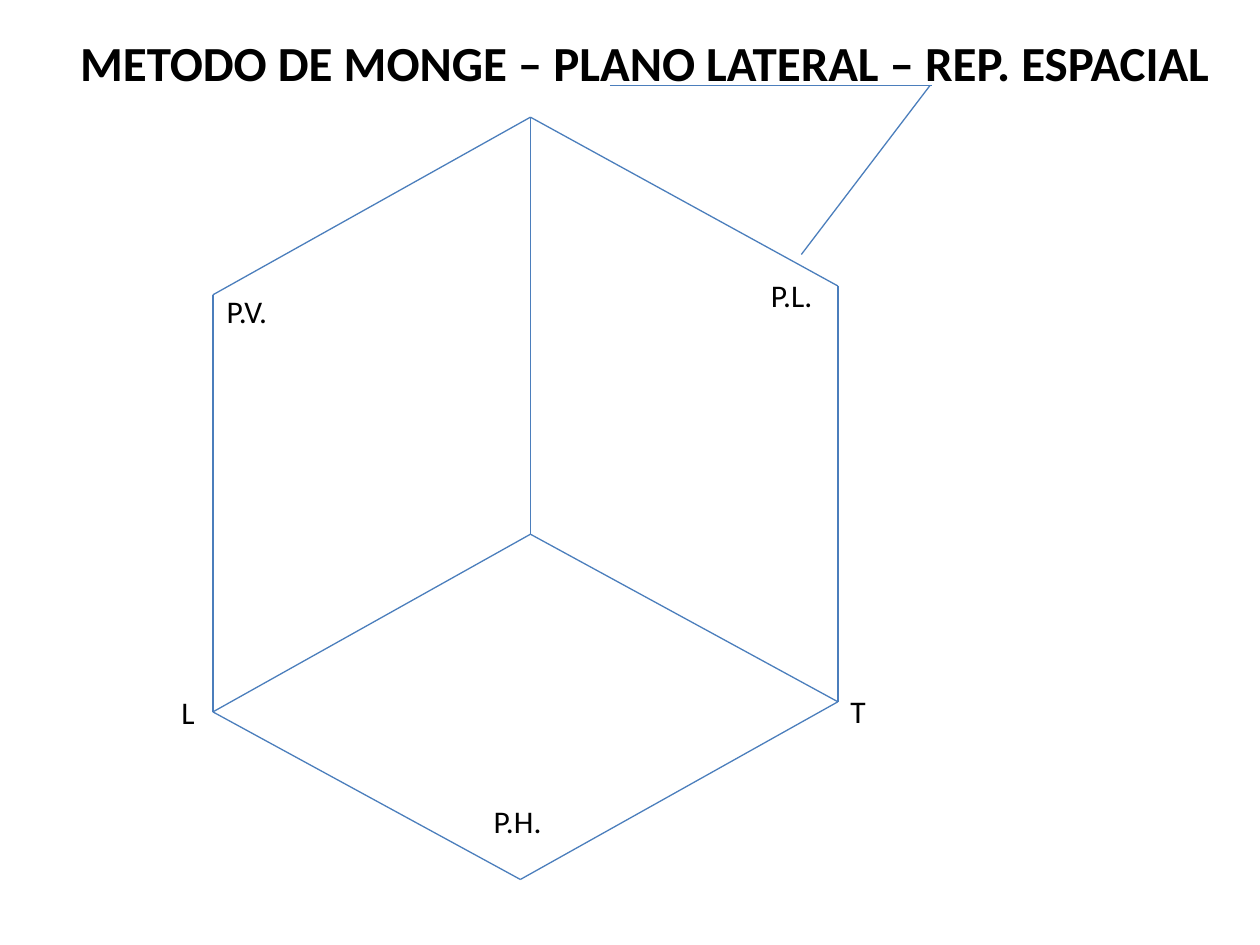
"""Build the slide on the Monge method with its three projection planes."""
from itertools import pairwise

from pptx import Presentation
from pptx.dml.color import RGBColor
from pptx.enum.shapes import MSO_CONNECTOR as Connector
from pptx.enum.text import MSO_AUTO_SIZE as AutoSize, PP_ALIGN as Align
from pptx.oxml.ns import qn
from pptx.util import Inches, Pt

BLACK = RGBColor(0x00, 0x00, 0x00)
BLUE = RGBColor(0x4B, 0x7E, 0xBC)

TOP = (4.21, 0.93)
CENTER = (4.21, 4.24)
LEFT_TOP = (1.69, 2.34)
LEFT_BOTTOM = (1.69, 5.65)
RIGHT_TOP = (6.65, 2.27)
RIGHT_BOTTOM = (6.65, 5.57)
FRONT = (4.13, 6.98)

OUTLINE = [TOP, LEFT_TOP, LEFT_BOTTOM, FRONT, RIGHT_BOTTOM, RIGHT_TOP, TOP]
INNER_CORNERS = [TOP, LEFT_BOTTOM, RIGHT_BOTTOM]

LABELS = [
    ("P.V.", 1.7, 2.27, 1.26),
    ("P.H.", 3.82, 6.32, 0.71),
    ("P.L.", 6.02, 2.14, 1.01),
    ("L", 1.34, 5.45, 0.71),
    ("T", 6.65, 5.44, 0.46),
]


def write_text(text_frame, text, *, size=18, bold=False, align=Align.LEFT):
    paragraph = text_frame.paragraphs[0]
    paragraph.alignment = align
    run = paragraph.add_run()
    run.text = text
    run.font.name = "Calibri"
    run.font.size = Pt(size)
    run.font.bold = bold
    run.font.color.rgb = BLACK


class Drawing:
    def __init__(self, slide, line_color=BLUE, line_width=0.75):
        self.slide = slide
        self.line_color = line_color
        self.line_width = Pt(line_width)

    def text(self, text, left, top, width, height=0.4, **text_format):
        box = self.slide.shapes.add_textbox(*map(Inches, (left, top, width, height)))
        box.text_frame.word_wrap = True
        box.text_frame.auto_size = AutoSize.SHAPE_TO_FIT_TEXT
        write_text(box.text_frame, text, **text_format)

    def line(self, start, end):
        connector = self.slide.shapes.add_connector(
            Connector.STRAIGHT, *map(Inches, (*start, *end)))
        connector.line.color.rgb = self.line_color
        connector.line.width = self.line_width
        properties = connector._element.spPr
        properties.append(properties.makeelement(qn("a:effectLst"), {}))


def main():
    presentation = Presentation()
    presentation.slide_width = Inches(10)
    presentation.slide_height = Inches(7.5)
    drawing = Drawing(presentation.slides.add_slide(presentation.slide_layouts[6]))

    drawing.text("METODO DE MONGE – PLANO LATERAL – REP. ESPACIAL",
                 0.51, 0.21, 9.21, 0.57, size=28, bold=True, align=Align.CENTER)
    for start, end in pairwise(OUTLINE):
        drawing.line(start, end)
    for corner in INNER_CORNERS:
        drawing.line(corner, CENTER)
    drawing.line((4.84, 0.68), (7.4, 0.68))
    drawing.line((7.38, 0.68), (6.36, 2.02))
    for label in LABELS:
        drawing.text(*label)

    presentation.save("out.pptx")


if __name__ == "__main__":
    main()
